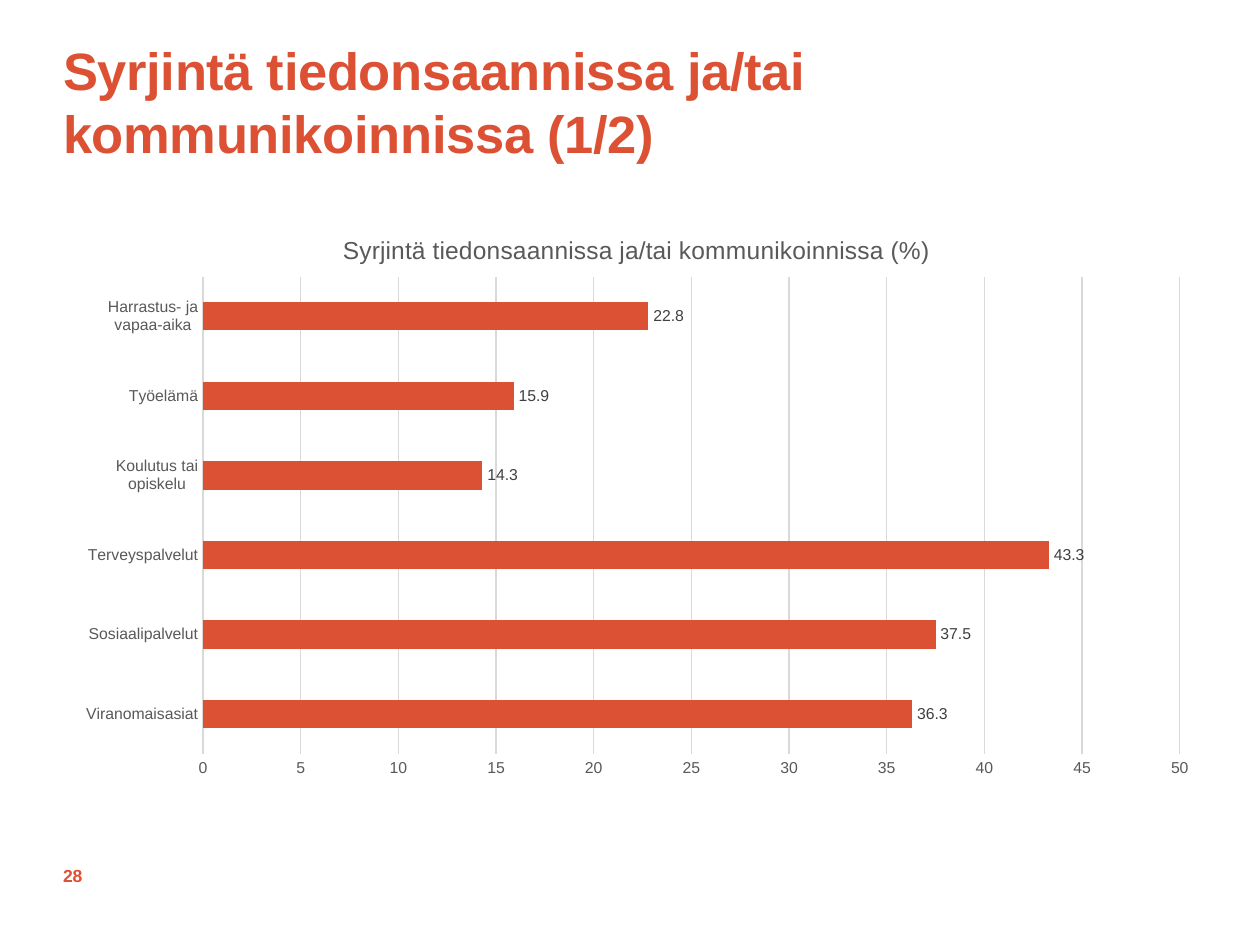
from lxml.etree import SubElement
from pptx import Presentation
from pptx.chart.data import CategoryChartData
from pptx.dml.color import RGBColor
from pptx.enum.chart import XL_CHART_TYPE as ChartType, XL_LABEL_POSITION as LabelPosition, XL_TICK_MARK as TickMark
from pptx.enum.text import MSO_ANCHOR as Anchor, MSO_AUTO_SIZE as AutoSize, PP_ALIGN as Align
from pptx.oxml.ns import qn
from pptx.util import Inches, Pt

ORANGE = RGBColor(0xDC, 0x50, 0x34)
GRID_GREY = RGBColor(0xD9, 0xD9, 0xD9)
TEXT_GREY = RGBColor(0x59, 0x59, 0x59)
LABEL_GREY = RGBColor(0x40, 0x40, 0x40)
HEADING = "Syrjintä tiedonsaannissa ja/tai kommunikoinnissa"


def format_font(font, size, color, bold=False):
    font.color.rgb = color
    for name, value in {"name": "Arial", "size": Pt(size), "bold": bold}.items():
        setattr(font, name, value)


def set_layout(parent, values):
    for old in parent.findall(qn("c:layout")):
        parent.remove(old)
    layout = SubElement(parent, qn("c:layout"))
    manual = SubElement(layout, qn("c:manualLayout"))
    for tag, value in values.items():
        SubElement(manual, qn(f"c:{tag}")).set("val", str(value))
    return layout


presentation = Presentation()
presentation.slide_width, presentation.slide_height = Inches(10), Inches(7.5)
column = presentation.slide_width / 20
row = presentation.slide_height / 25
slide = presentation.slides.add_slide(presentation.slide_layouts[5])

title = slide.shapes.title
number = slide.shapes.add_textbox(0, 0, 0, 0)
for shape, text, size, anchor, top, width, height in (
    (title, f"{HEADING} (1/2)", 30, Anchor.TOP, 1, 18, 3.87),
    (number, "28", 10, Anchor.MIDDLE, 22.5, 1.42, 1.33),
):
    shape.left, shape.top = int(column), int(top * row)
    shape.width, shape.height = int(width * column), int(height * row)
    frame = shape.text_frame
    frame.text = text
    settings = {"word_wrap": True, "auto_size": AutoSize.NONE, "vertical_anchor": anchor,
                "margin_left": 0, "margin_right": 0, "margin_top": 0, "margin_bottom": 0}
    for name, value in settings.items():
        setattr(frame, name, value)
    paragraph = frame.paragraphs[0]
    paragraph.alignment = Align.LEFT
    format_font(paragraph.runs[0].font, size, ORANGE, True)

title_paragraph = title.text_frame.paragraphs[0]
title_paragraph.line_spacing = Pt(36)
title_paragraph.runs[0].font._element.set("spc", "-20")

discrimination = {
    "Viranomaisasiat": 36.3,
    "Sosiaalipalvelut": 37.5,
    "Terveyspalvelut": 43.3,
    "Koulutus tai opiskelu": 14.3,
    "Työelämä": 15.9,
    "Harrastus- ja vapaa-aika": 22.8,
}
data = CategoryChartData()
data.categories = list(discrimination)
data.add_series("Series 1", list(discrimination.values()))
chart = slide.shapes.add_chart(
    ChartType.BAR_CLUSTERED, int(column), int(5.47 * row), int(18.22 * column), int(15.4 * row), data
).chart
format_font(chart.font, 10, RGBColor(0, 0, 0))
chart.has_legend = False
chart.has_title = True
chart_title = chart.chart_title
chart_title.text_frame.text = f"{HEADING} (%)"
format_font(chart_title.text_frame.paragraphs[0].runs[0].font, 14, TEXT_GREY)
title_layout = set_layout(chart_title._element, {"xMode": "edge", "yMode": "edge", "x": 0.24, "y": 0.04})
chart_title._element.find(qn("c:tx")).addnext(title_layout)

plot_area = chart._chartSpace.chart.plotArea
plot_layout = set_layout(plot_area, {"layoutTarget": "inner", "xMode": "edge", "yMode": "edge",
                                     "x": 0.122, "y": 0.12, "w": 0.851, "h": 0.82})
plot_area.insert(0, plot_layout)

for axis in (chart.category_axis, chart.value_axis):
    axis.major_tick_mark = axis.minor_tick_mark = TickMark.NONE
    format_font(axis.tick_labels.font, 9, TEXT_GREY)
chart.category_axis.has_major_gridlines = False
value_axis = chart.value_axis
for name, value in {"minimum_scale": 0, "maximum_scale": 50, "major_unit": 5, "has_major_gridlines": True}.items():
    setattr(value_axis, name, value)
value_axis.format.line.fill.background()
for line in (chart.category_axis.format.line, value_axis.major_gridlines.format.line):
    line.color.rgb = GRID_GREY
    line.width = Pt(0.75)

plot = chart.plots[0]
plot.gap_width = 182
plot.vary_by_categories = False
series = plot.series[0]
series.format.fill.solid()
series.format.fill.fore_color.rgb = ORANGE
labels = series.data_labels
labels.show_value = True
labels.position = LabelPosition.OUTSIDE_END
format_font(labels.font, 9, LABEL_GREY)

presentation.save("out.pptx")
